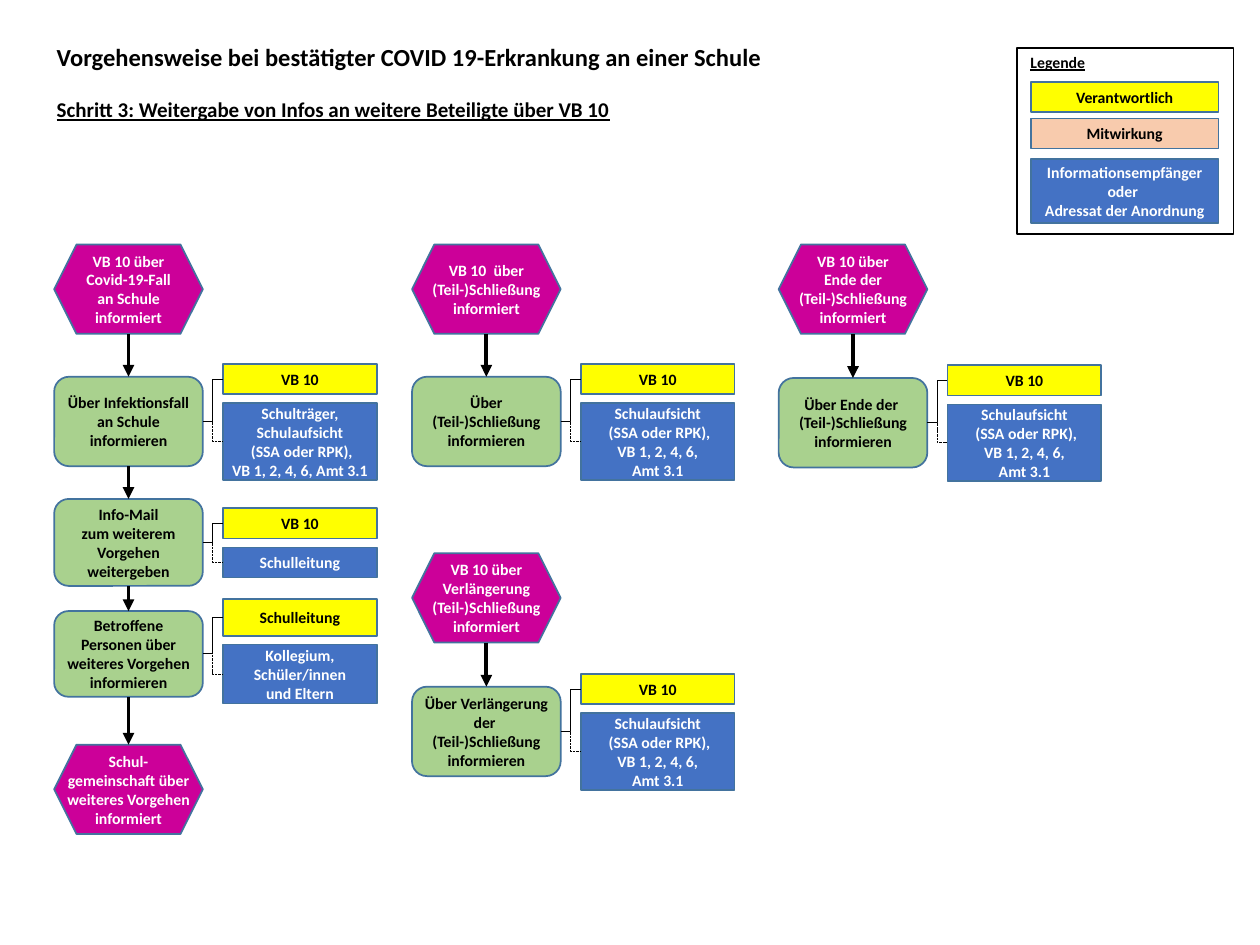
"""Flow chart of the school notices sent through VB 10."""
from dataclasses import dataclass

from lxml import etree
from pptx import Presentation
from pptx import util as u
from pptx.dml import color
from pptx.enum import dml, shapes, text
from pptx.oxml import ns

HEX = shapes.MSO_SHAPE.HEXAGON
ROUND = shapes.MSO_SHAPE.ROUNDED_RECTANGLE
RECT = shapes.MSO_SHAPE.RECTANGLE


@dataclass(frozen=True)
class Theme:
    """Colours and type sizes."""

    font: str = "Calibri"
    black: str = "000000"
    white: str = "FFFFFF"
    edge: str = "43739E"
    event: str = "CC0099"
    task: str = "A9D18E"
    lead: str = "FFFF00"
    help: str = "F8CBAD"
    info: str = "4472C4"
    head: int = 14
    step: int = 12
    body: int = 9


class Chart:
    """Style and current slide, with one method for each kind of element."""

    wide, side, shift = 1.18, 1.22, 0.16

    def __init__(self, slide, theme):
        self.slide = slide
        self.theme = theme

    def paint(self, item, code):
        item.solid()
        item.fore_color.rgb = color.RGBColor.from_string(code)

    def letter(self, para, words, size, ink, line=False):
        for index, part in enumerate(words.split("\n")):
            if index:
                para.add_line_break()
            run = para.add_run()
            run.text = part
            font = run.font
            font.name, font.size, font.bold = self.theme.font, u.Pt(size), True
            font.underline = line
            self.paint(font.fill, ink)

    def title(self, head, step):
        shape = self.slide.shapes.title
        shape.left, shape.top = u.Inches(0.35), u.Inches(0.28)
        shape.width, shape.height = u.Inches(7.32), u.Inches(0.74)
        frame = shape.text_frame
        frame.auto_size = text.MSO_AUTO_SIZE.NONE
        frame.vertical_anchor = text.MSO_ANCHOR.TOP
        first, second = frame.paragraphs[0], frame.add_paragraph()
        self.letter(first, head, self.theme.head, self.theme.black)
        self.letter(second, step, self.theme.step, self.theme.black, line=True)
        for para, gap in ((first, 0), (second, 14.6)):
            para.alignment = text.PP_ALIGN.LEFT
            para.line_spacing, para.space_before = 1.0, u.Pt(gap)

    def label(self, left, top, width, height, words):
        box = self.slide.shapes.add_textbox(*map(u.Inches, (left, top, width, height)))
        box.text_frame.word_wrap = False
        para = box.text_frame.paragraphs[0]
        self.letter(para, words, self.theme.body, self.theme.black, line=True)

    def frame(self, left, top, width, height):
        shape = self.slide.shapes.add_shape(RECT, *map(u.Inches, (left, top, width, height)))
        shape.shadow.inherit = False
        shape.fill.background()
        self.paint(shape.line.fill, self.theme.black)
        shape.line.width = u.Pt(1)

    def box(self, kind, left, top, width, height, words, fill, ink):
        shape = self.slide.shapes.add_shape(kind, *map(u.Inches, (left, top, width, height)))
        shape.shadow.inherit = False
        self.paint(shape.fill, fill)
        self.paint(shape.line.fill, self.theme.edge)
        shape.line.width = u.Pt(1)
        frame = shape.text_frame
        frame.word_wrap = kind != HEX
        frame.vertical_anchor = text.MSO_ANCHOR.MIDDLE
        frame.margin_left = frame.margin_right = u.Inches(0.04)
        frame.margin_top = frame.margin_bottom = u.Inches(0.04)
        for index, part in enumerate(words.split("|")):
            para = frame.add_paragraph() if index else frame.paragraphs[0]
            para.alignment = text.PP_ALIGN.CENTER
            self.letter(para, part, self.theme.body, ink)
        return shape

    def link(self, kind, start, end, width):
        line = self.slide.shapes.add_connector(kind, *start, *end)
        self.paint(line.line.fill, self.theme.black)
        line.line.width = u.Pt(width)
        etree.SubElement(line.element.spPr, ns.qn("a:effectLst"))
        return line

    def arrow(self, above, below):
        mid = above.left + above.width // 2
        start, end = (mid, above.top + above.height), (mid, below.top)
        line = self.link(shapes.MSO_CONNECTOR.STRAIGHT, start, end, 2.25)
        stroke = line.element.spPr.find(ns.qn("a:ln"))
        etree.SubElement(stroke, ns.qn("a:tailEnd"), type="triangle")
        for shape, site, join in ((above, 2, line.begin_connect), (below, 0, line.end_connect)):
            if shape.auto_shape_type == ROUND:
                join(shape, site)

    def branch(self, task, role, dash=False):
        start = task.left + task.width, task.top + task.height // 2
        end = role.left, role.top + role.height // 2
        line = self.link(shapes.MSO_CONNECTOR.ELBOW, start, end, 0.5)
        line.begin_connect(task, 3)
        line.end_connect(role, 1)
        if dash:
            line.line.dash_style = dml.MSO_LINE.SQUARE_DOT

    def event(self, left, top, words):
        look = self.theme
        return self.box(HEX, left, top, self.wide, 0.71, words, look.event, look.white)

    def task(self, left, top, words, tall, lead, info, deep, high=0.24):
        look = self.theme
        task = self.box(ROUND, left, top, self.wide, tall, words, look.task, look.black)
        side = left + self.wide + self.shift
        low = top + tall / 2 + self.shift - deep / 2
        owner = self.box(RECT, side, low - 0.07 - high, self.side, high,
                         lead, look.lead, look.black)
        target = self.box(RECT, side, low, self.side, deep, info, look.info, look.white)
        self.branch(task, owner)
        self.branch(task, target, dash=True)
        return task

    def flow(self, *nodes):
        for above, below in zip(nodes, nodes[1:]):
            self.arrow(above, below)

    def legend(self):
        look = self.theme
        self.frame(8.07, 0.38, 1.72, 1.48)
        self.label(8.08, 0.37, 0.64, 0.25, "Legende")
        for top, tall, words, fill, ink in (
            (0.65, 0.24, "Verantwortlich", look.lead, look.black),
            (0.94, 0.24, "Mitwirkung", look.help, look.black),
            (1.26, 0.51, "Informationsempfänger\noder \nAdressat der Anordnung",
             look.info, look.white),
        ):
            self.box(RECT, 8.18, top, 1.49, tall, words, fill, ink)


def main():
    deck = Presentation()
    deck.slide_width, deck.slide_height = u.Inches(10), u.Inches(7.5)
    chart = Chart(deck.slides.add_slide(deck.slide_layouts[5]), Theme())
    chart.title("Vorgehensweise bei bestätigter COVID 19-Erkrankung an einer Schule",
                "Schritt 3: Weitergabe von Infos an weitere Beteiligte über VB 10")
    chart.legend()

    left = 0.43
    chart.flow(
        chart.event(left, 1.94, "VB 10 über\nCovid-19-Fall\nan Schule\ninformiert"),
        chart.task(left, 2.99, "Über Infektionsfall an Schule informieren", 0.71, "VB 10",
                   "Schulträger,|Schulaufsicht\n (SSA oder RPK),\nVB 1, 2, 4, 6, Amt 3.1", 0.61),
        chart.task(left, 3.96, "Info-Mail\nzum weiterem Vorgehen\nweitergeben", 0.69,
                   "VB 10", "Schulleitung", 0.24),
        chart.task(left, 4.85, "Betroffene Personen über weiteres Vorgehen\ninformieren", 0.68,
                   "Schulleitung", "Kollegium,|Schüler/innen\nund Eltern", 0.47, 0.29),
        chart.event(left, 5.91, "Schul-\ngemeinschaft über\nweiteres Vorgehen\ninformiert"),
    )

    board = "Schulaufsicht\n (SSA oder RPK),\nVB 1, 2, 4, 6,\nAmt 3.1"
    for left, top, drop, cause, step in (
        (3.27, 1.94, 1.05, "VB 10  über\n(Teil-)Schließung\ninformiert",
         "Über\n(Teil-)Schließung informieren"),
        (3.27, 4.39, 1.06, "VB 10 über\nVerlängerung\n(Teil-)Schließung\ninformiert",
         "Über Verlängerung der \n(Teil-)Schließung informieren"),
        (6.18, 1.94, 1.06, "VB 10 über\nEnde der\n(Teil-)Schließung\ninformiert",
         "Über Ende der \n(Teil-)Schließung informieren"),
    ):
        chart.flow(chart.event(left, top, cause),
                   chart.task(left, top + drop, step, 0.71, "VB 10", board, 0.61))

    deck.save("out.pptx")


if __name__ == "__main__":
    main()
